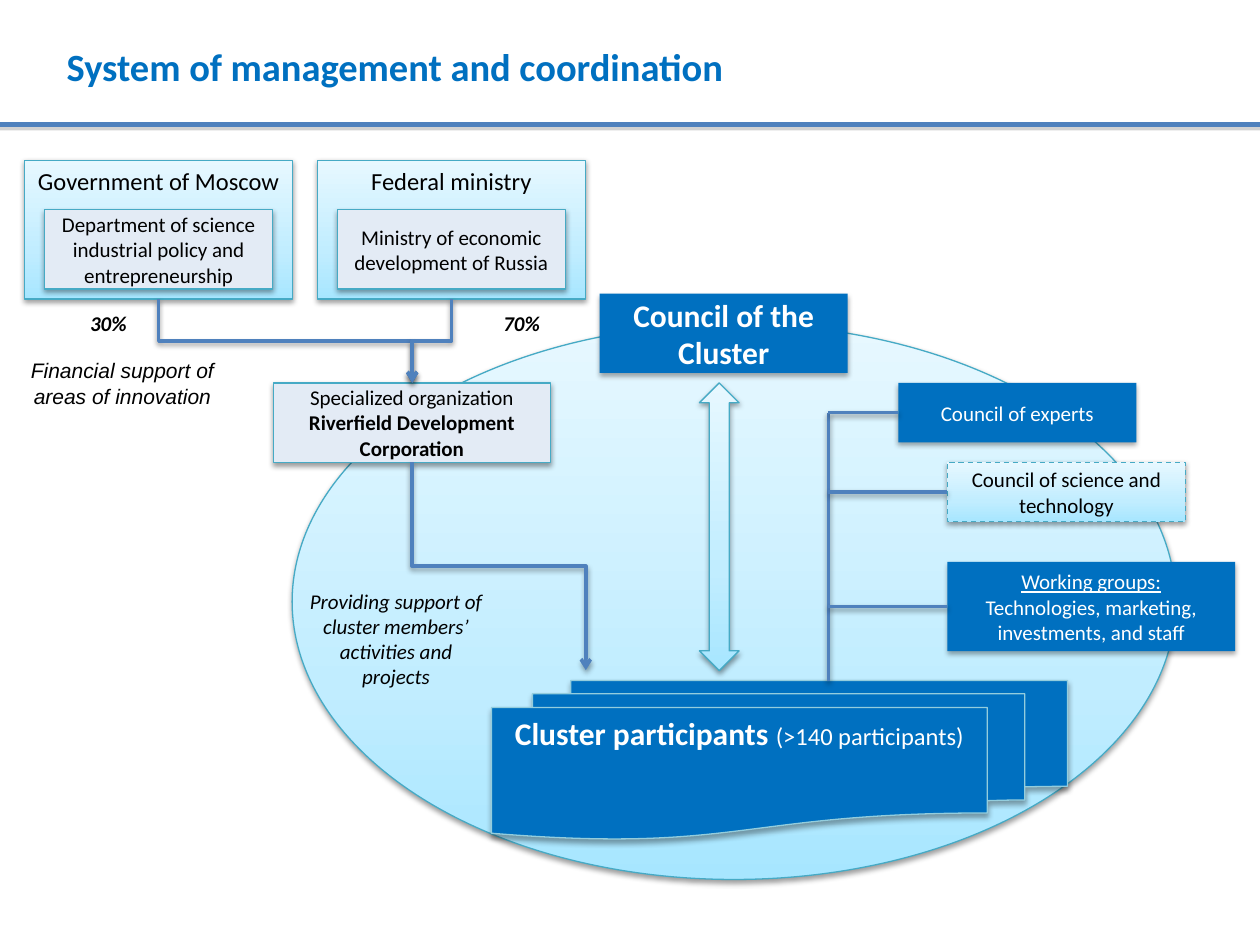
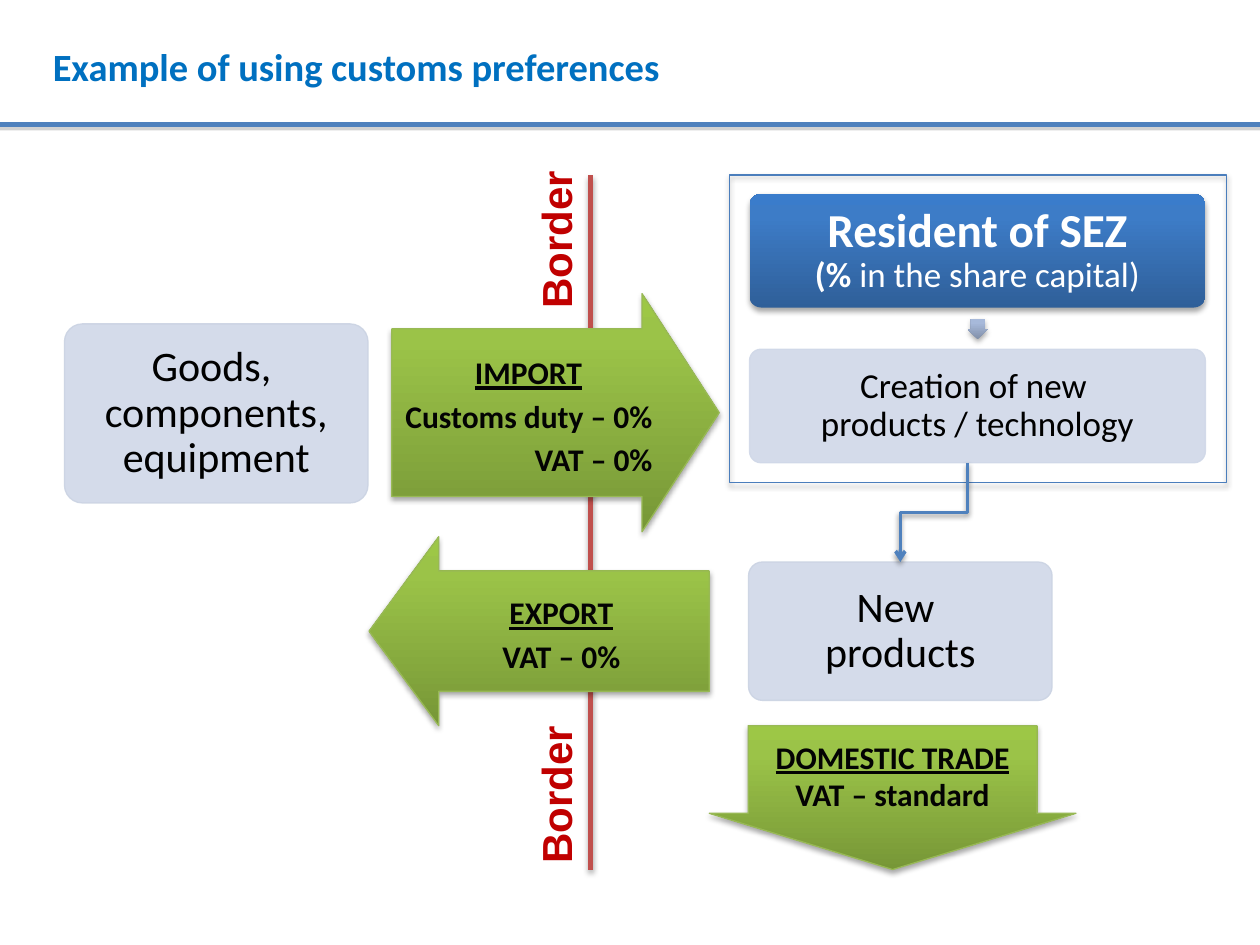
from lxml.etree import SubElement as Sub
from pptx import Presentation
from pptx.dml.color import RGBColor
from pptx.enum.dml import MSO_LINE as Dash
from pptx.enum.shapes import MSO_CONNECTOR as Link, MSO_SHAPE as Kind
from pptx.enum.text import MSO_ANCHOR as Anchor, MSO_AUTO_SIZE as Fit, PP_ALIGN as Align
from pptx.oxml.ns import qn
from pptx.util import Cm, Pt

BLUE, STEEL, TEAL, RED = "0070C0", "4F81BD", "46AAC5", "C0504D"
PALE, MIST, BLACK, WHITE = "E3EBF5", "D0D8E8", "000000", "FFFFFF"
SKY = ((0, "A7E6FF"), (35, "C1EDFF"), (100, "E7F8FF"))
GREEN = ((0, "779737"), (80, "9BC348"), (100, "9DC746"))
NAVY = ((0, "2F5F99"), (80, "3D7CC7"), (100, "3A7CCB"))
GREY = ((0, "818FA8"), (80, "A7B9DA"), (100, "A7BADC"))
# Shadow: colour, opacity in percent, blur and distance in points
SOFT, DEEP = (BLACK, 38, 3.1, 1.6), (BLACK, 35, 3.1, 1.8)
FLAT = ("808080", 35, 0, 1.8)


def rgb(code):
    return RGBColor.from_string(code)


def shade(item, shadow):
    """Give a shape or connector its own shadow, or none at all."""
    effects = Sub(item.element.spPr, qn("a:effectLst"))
    if shadow:
        code, part, blur, dist = shadow
        outer = Sub(effects, qn("a:outerShdw"), blurRad=str(Pt(blur)),
                    dist=str(Pt(dist)), dir="5400000", rotWithShape="0")
        tint = Sub(outer, qn("a:srgbClr"), val=code)
        Sub(tint, qn("a:alpha"), val=str(part * 1000))


def blend(shape, stops):
    shape.fill.gradient()
    shape.fill.gradient_angle = 90
    grad = shape.element.spPr.find(qn("a:gradFill"))
    grad.set("rotWithShape", "0")
    ramp = grad.find(qn("a:gsLst"))
    for old in list(ramp):
        ramp.remove(old)
    for place, code in stops:
        stop = Sub(ramp, qn("a:gs"), pos=str(place * 1000))
        Sub(stop, qn("a:srgbClr"), val=code)


def draw(slide, kind, box, fill=None, line=None, shadow=SOFT, adj=(), alpha=None):
    """Add a preset shape; fill is a colour, gradient stops or None."""
    shape = slide.shapes.add_shape(kind, *map(Cm, box))
    for i, value in enumerate(adj):
        shape.adjustments[i] = value
    if fill is None:
        shape.fill.background()
    elif isinstance(fill, str):
        shape.fill.solid()
        shape.fill.fore_color.rgb = rgb(fill)
    else:
        blend(shape, fill)
    if line:
        shape.line.color.rgb = rgb(line)
        shape.line.width = Pt(0.75)
    else:
        shape.line.fill.background()
    if alpha:
        for tint in shape.element.spPr.iter(qn("a:srgbClr")):
            Sub(tint, qn("a:alpha"), val=str(alpha * 1000))
    shade(shape, shadow)
    return shape


def write(shape, paras, color=BLACK, align=Align.CENTER, font="Calibri",
          anchor=Anchor.MIDDLE, space=None, inset=None, wrap=True):
    """Fill a shape with paragraphs of (text, size, marks) runs; marks from b, i, u."""
    frame = shape.text_frame
    frame.word_wrap = wrap
    frame.vertical_anchor = anchor
    if inset is not None:
        frame.margin_left = frame.margin_right = Cm(inset)
        frame.margin_top = frame.margin_bottom = Cm(inset)
    for i, runs in enumerate(paras):
        para = frame.add_paragraph() if i else frame.paragraphs[0]
        para.alignment = align
        if space:
            para.line_spacing = space
        for text, size, marks in runs:
            run = para.add_run()
            run.text = text
            face = run.font
            face.name, face.size, face.color.rgb = font, Pt(size), rgb(color)
            face.bold, face.italic, face.underline = (m in marks for m in "biu")
    return shape


def label(slide, box, text, size=12, marks="i", turn=0, **style):
    area = slide.shapes.add_textbox(*map(Cm, box))
    area.rotation = turn
    write(area, [[(text, size, marks)]], anchor=Anchor.TOP, **style)


def panel(slide, box, paras, fill=BLUE, line=None, color=WHITE, **style):
    shadow = DEEP if fill == BLUE else SOFT
    shape = draw(slide, Kind.RECTANGLE, box, fill, line, shadow)
    return write(shape, paras, color, **style)


def stroke(item, color, width, shadow):
    item.line.color.rgb = rgb(color)
    item.line.width = Pt(width)
    shade(item, shadow)


def rule(slide, x1, y1, x2, y2, color=STEEL, width=2, shadow=SOFT):
    line = slide.shapes.add_connector(Link.STRAIGHT, *map(Cm, (x1, y1, x2, y2)))
    stroke(line, color, width, shadow)
    return line


def elbow(slide, x1, y1, x2, y2):
    """Arrow that leaves downwards, steps sideways halfway, and ends downwards."""
    wide, high = y2 - y1, abs(x2 - x1)
    left, top = (x1 + x2 - wide) / 2, (y1 + y2 - high) / 2
    arrow = slide.shapes.add_connector(
        Link.ELBOW, *map(Cm, (left, top, left + wide, top + high)))
    frame = arrow.element.spPr.xfrm
    frame.set("rot", "5400000" if x2 < x1 else "16200000")
    if x2 > x1:
        frame.set("flipH", "1")
    stroke(arrow, STEEL, 2, SOFT)
    Sub(arrow.element.spPr.find(qn("a:ln")), qn("a:tailEnd"), type="arrow")


def page(deck, title, left):
    """Start a slide with its title and the ruled band below it."""
    slide = deck.slides.add_slide(deck.slide_layouts[5])
    rule(slide, 0, 2.51, 25.4, 2.51, width=3, shadow=FLAT)
    head = slide.shapes.title
    head.left, head.top, head.width, head.height = map(Cm, (left, 0.74, 15.19, 1.19))
    write(head, [[(title, 22, "b")]], BLUE, Align.LEFT)
    head.text_frame.auto_size = Fit.NONE
    return slide


def cluster(slide, box):
    x, y, w, h = box
    draw(slide, Kind.OVAL, box, SKY, TEAL)
    stack = draw(slide, Kind.FLOWCHART_MULTIDOCUMENT, (x + 4.02, y + 7.19, 11.61, 3.2),
                 BLUE, "93CDDD", DEEP)
    write(stack, [[("Cluster participants ", 18, "b"), ("(>140 participants)", 14, "")]],
          WHITE, anchor=Anchor.TOP)
    panel(slide, (x - 0.38, y + 1.19, 5.59, 1.6),
          [[("Specialized organization ", 12, ""),
            ("Riverfield Development Corporation", 12, "b")]], PALE, TEAL, BLACK)
    panel(slide, (x + 6.2, y - 0.61, 5, 1.6), [[("Council of the Cluster", 18, "b")]])
    draw(slide, Kind.UP_DOWN_ARROW, (x + 8.21, y + 1.19, 0.8, 5.8), SKY, TEAL)
    label(slide, (x, y + 5.2, 4.19, 2.31),
          "Providing support of cluster members’ activities and projects")
    elbow(slide, x + 2.42, y + 2.79, x + 5.92, y + 6.98)


def councils(slide, box):
    """Advisory bodies, each joined to the trunk on the left of the box."""
    x, y, w, h = box
    experts = panel(slide, (x + 1.41, y, 4.8, 1.2), [[("Council of experts", 12, "")]])
    groups = panel(slide, (x + 2.4, y + 3.61, 5.8, 1.8),
                   [[("Working groups:", 12, "u")],
                    [("Technologies, marketing, investments, and staff", 12, "")]])
    science = panel(slide, (x + 2.4, y + 1.6, 4.8, 1.2),
                    [[("Council of science and technology", 12, "")]], SKY, TEAL, BLACK)
    science.line.dash_style = Dash.DASH
    rule(slide, x, y + 0.6, x, y + h)
    for body in (experts, science, groups):
        mid = (body.top + body.height / 2) / Cm(1)
        branch = rule(slide, body.left / Cm(1), mid, x, mid)
        branch.begin_connect(body, 1)


def funder(slide, box, name, unit, share, shift, goal):
    x, y, w, h = box
    panel(slide, box, [[(name, 14, "")]], SKY, TEAL, BLACK, anchor=Anchor.TOP)
    panel(slide, (x + 0.4, y + 1, w - 0.8, 1.6), [[(unit, 12, "")]], PALE, TEAL, BLACK)
    elbow(slide, x + w / 2, y + h, *goal)
    label(slide, (x + shift, y + h + 0.1, 2.59, 0.79), share, marks="bi")


def border(slide, box):
    x, y, w, h = box
    rule(slide, x + w, y, x + w, y + h, RED, 3, DEEP)
    for top in (y + 0.69, y + 11.89):
        label(slide, (x, top, 3.33, 1.27), "Border", 24, "b", 270, color="C00000",
              font="Arial", align=Align.RIGHT, wrap=False)


def card(slide, box, lines, size, edge="CBD3E3"):
    shape = draw(slide, Kind.ROUNDED_RECTANGLE, box, MIST, edge, None, (0.1,), 90)
    write(shape, [[(text, size, "")] for text in lines], space=0.9, inset=0.1)


def resident(slide, box):
    x, y, w, h = box
    left, wide, high = x + 0.4, w - 0.82, 2.29
    top = draw(slide, Kind.ROUNDED_RECTANGLE, (left, y + 0.38, wide, high),
               NAVY, None, DEEP, (0.1,))
    write(top, [[("Resident of SEZ", 27, "b")],
                [("(% ", 20, "b"), ("in the share capital)", 20, "")]],
          WHITE, space=0.9, inset=0.1)
    step = draw(slide, Kind.RIGHT_ARROW, (left + wide / 2 - 0.2, y + 2.9, 0.41, 0.41),
                GREY, None, DEEP, (0.667, 0.5))
    step.rotation = 90
    card(slide, (left, y + 3.51, wide, high),
         ("Creation of new ", "products / technology"), 20, MIST)
    draw(slide, Kind.RECTANGLE, box, None, "4B7EBC")


def flow(slide, kind, box, adj, name, terms, space=1.15, align=Align.CENTER):
    """Green trade arrow with an underlined name and its terms."""
    arrow = draw(slide, kind, box, GREEN, "98B955", DEEP, adj)
    write(arrow, [[(name, 18, "bu")]] + [[(term, 18, "b")] for term in terms],
          "030303", align, space=space)
    arrow.text_frame.paragraphs[0].alignment = Align.CENTER


def manage(deck):
    slide = page(deck, "System of management and coordination", 1.09)
    cluster(slide, (5.89, 6.53, 17.81, 11.2))
    councils(slide, (16.7, 7.72, 8.2, 6))
    goal = (8.31, 7.72)
    funder(slide, (0.5, 3.23, 5.4, 2.8), "Government of Moscow",
           "Department of science industrial policy and entrepreneurship",
           "30%", 0.39, goal)
    funder(slide, (6.4, 3.23, 5.4, 2.8), "Federal ministry",
           "Ministry of economic development of Russia", "70%", 2.82, goal)
    label(slide, (0.3, 7.09, 4.34, 1.27), "Financial support of areas of innovation",
          font="Arial")


def customs(deck):
    slide = page(deck, "Example of using customs preferences", 0.81)
    border(slide, (9.53, 3.53, 2.38, 14))
    resident(slide, (14.71, 3.53, 10.01, 6.2))
    card(slide, (15.09, 11.33, 6.12, 2.79), ("New ", "products"), 24)
    card(slide, (1.3, 6.53, 6.12, 3.61), ("Goods, ", "components, equipment"), 24)
    flow(slide, Kind.RIGHT_ARROW, (7.9, 5.92, 6.6, 4.8), (0.704, 0.324), "IMPORT",
         ("Customs duty – 0%", "VAT – 0%"), align=Align.RIGHT)
    flow(slide, Kind.LEFT_ARROW, (7.44, 10.82, 6.86, 3.81), (0.637, 0.369), "EXPORT",
         ("VAT – 0%",))
    elbow(slide, 19.5, 9.33, 18.15, 11.33)
    flow(slide, Kind.DOWN_ARROW, (14.3, 14.63, 7.39, 2.9), (0.788, 0.391),
         "DOMESTIC TRADE", ("VAT – standard",), None)


def main():
    deck = Presentation()
    deck.slide_width, deck.slide_height = Cm(25.4), Cm(19.05)
    manage(deck)
    customs(deck)
    deck.save("out.pptx")


if __name__ == "__main__":
    main()
